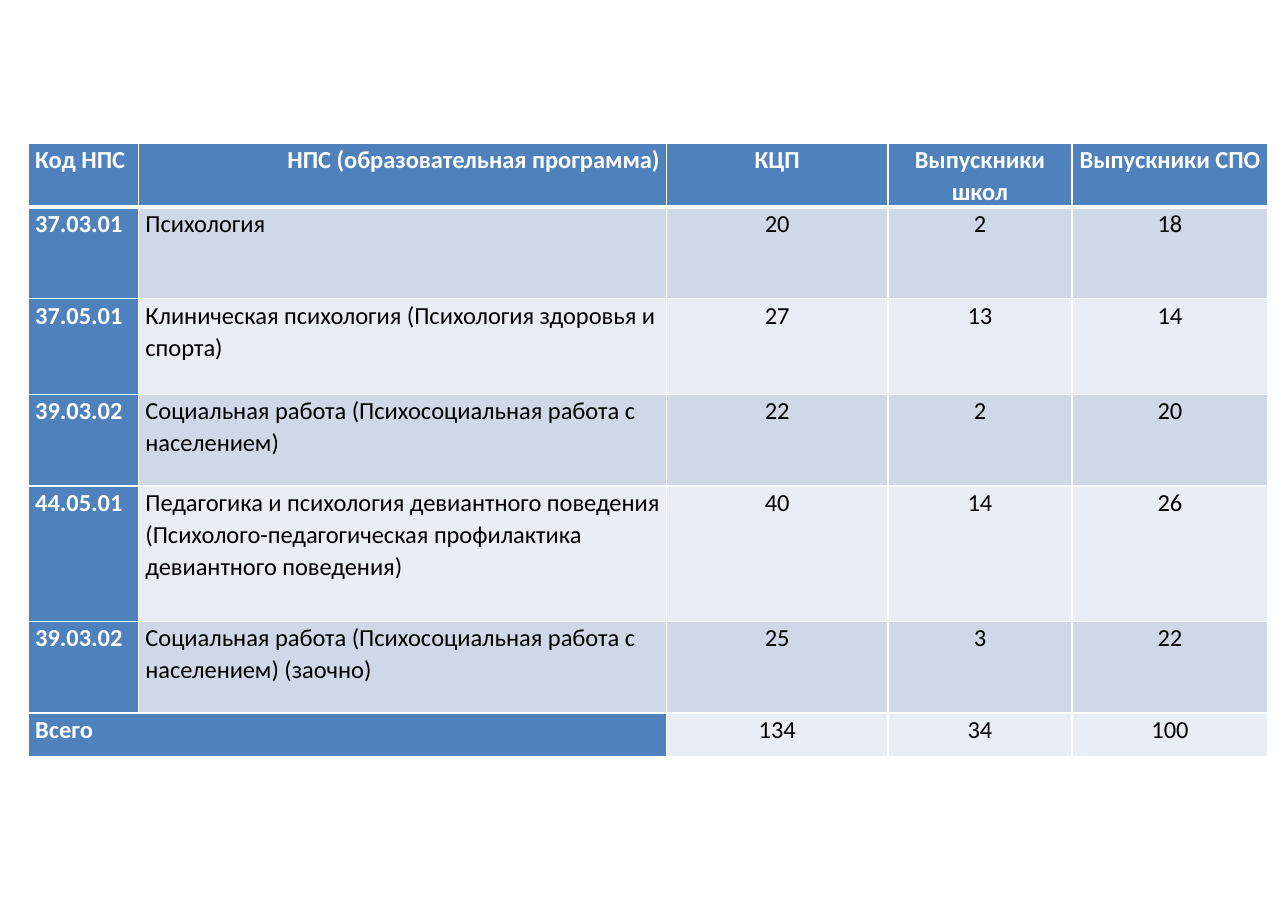
from lxml import etree
from pptx import Presentation
from pptx.dml.color import RGBColor
from pptx.enum.text import MSO_ANCHOR, PP_ALIGN
from pptx.oxml.ns import qn
from pptx.util import Inches, Pt

LEFT, CENTER, RIGHT = PP_ALIGN.LEFT, PP_ALIGN.CENTER, PP_ALIGN.RIGHT
TOP = MSO_ANCHOR.TOP

COLORS = {
    "accent": "4F81BD",
    "band_dark": "D0D8E8",
    "band_light": "E9EDF4",
    "white": "FFFFFF",
    "black": "000000",
}

HEADINGS = ["Код НПС", "НПС (образовательная программа)", "КЦП",
            "Выпускники школ", "Выпускники СПО"]
PROGRAMS = [
    ["37.03.01", "Психология", 20, 2, 18],
    ["37.05.01", "Клиническая психология (Психология здоровья и\nспорта)", 27, 13, 14],
    ["39.03.02", "Социальная работа (Психосоциальная работа с\nнаселением)", 22, 2, 20],
    ["44.05.01", "Педагогика и психология девиантного поведения\n"
                 "(Психолого-педагогическая профилактика\nдевиантного поведения)", 40, 14, 26],
    ["39.03.02", "Социальная работа (Психосоциальная работа с\nнаселением) (заочно)", 25, 3, 22],
]
TOTALS = ["Всего", "", 134, 34, 100]
COLUMN_WIDTHS = [1, 4.79, 2.01, 1.67, 1.78]
ROW_HEIGHTS = [0.58, 0.83, 0.87, 0.83, 1.23, 0.83, 0.4]


class AdmissionSlide:
    """Holds the table style and the current slide."""

    font = {"name": "Calibri", "size": Pt(16)}
    cell_format = {"margin_left": Inches(0.06), "margin_right": Inches(0.06),
                   "margin_top": 0, "margin_bottom": 0, "vertical_anchor": TOP}

    def __init__(self, presentation):
        self.slide = presentation.slides.add_slide(presentation.slide_layouts[6])

    def apply(self, target, formats):
        for attribute, value in formats.items():
            setattr(target, attribute, value)

    def color(self, name):
        return RGBColor.from_string(COLORS[name])

    def add_borders(self, cell, widths):
        properties = cell._tc.get_or_add_tcPr()
        for side, width in widths.items():
            border = etree.SubElement(properties, qn(f"a:ln{side}"), w=str(Pt(width)))
            fill = etree.SubElement(border, qn("a:solidFill"))
            etree.SubElement(fill, qn("a:srgbClr"), val=COLORS["white"])

    def fill_cell(self, cell, text, fill, alignment, is_heading, borders):
        self.apply(cell, self.cell_format)
        self.add_borders(cell, borders)
        cell.fill.solid()
        cell.fill.fore_color.rgb = self.color(fill)
        cell.text_frame.text = str(text)
        for paragraph in cell.text_frame.paragraphs:
            self.apply(paragraph, {"alignment": alignment, "line_spacing": 1.07})
            self.apply(paragraph.font, {**self.font, "bold": is_heading})
            paragraph.font.color.rgb = self.color("white" if is_heading else "black")
            for run in paragraph.runs:
                self.apply(run.font, {**self.font, "bold": is_heading})
                run.font.color.rgb = self.color("white" if is_heading else "black")

    def add_table(self, left, top, rows, widths, heights):
        table = self.slide.shapes.add_table(
            len(rows), len(widths), Inches(left), Inches(top),
            Inches(sum(widths)), Inches(sum(heights))).table
        for column, width in zip(table.columns, widths):
            column.width = Inches(width)
        for row, height in zip(table.rows, heights):
            row.height = Inches(height)

        for r, values in enumerate(rows):
            band = "band_dark" if r % 2 else "band_light"
            # The rule under the headings is thicker than the others
            borders = {"L": 1, "R": 1, "T": 3 if r == 1 else 1, "B": 3 if r == 0 else 1}
            for c, text in enumerate(values):
                is_heading = r == 0 or c == 0
                alignment = CENTER if c > 1 else RIGHT if (r, c) == (0, 1) else LEFT
                self.fill_cell(table.cell(r, c), text, "accent" if is_heading else band,
                               alignment, is_heading, borders)
        return table


def main():
    presentation = Presentation()
    presentation.slide_width = Inches(11.69)
    presentation.slide_height = Inches(8.26)

    # Admission quotas by programme, with a totals row
    admission = AdmissionSlide(presentation)
    quotas = admission.add_table(0.26, 1.3, [HEADINGS, *PROGRAMS, TOTALS],
                                 COLUMN_WIDTHS, ROW_HEIGHTS)
    total_row = len(ROW_HEIGHTS) - 1
    quotas.cell(total_row, 0).merge(quotas.cell(total_row, 1))

    presentation.save("out.pptx")


if __name__ == "__main__":
    main()
